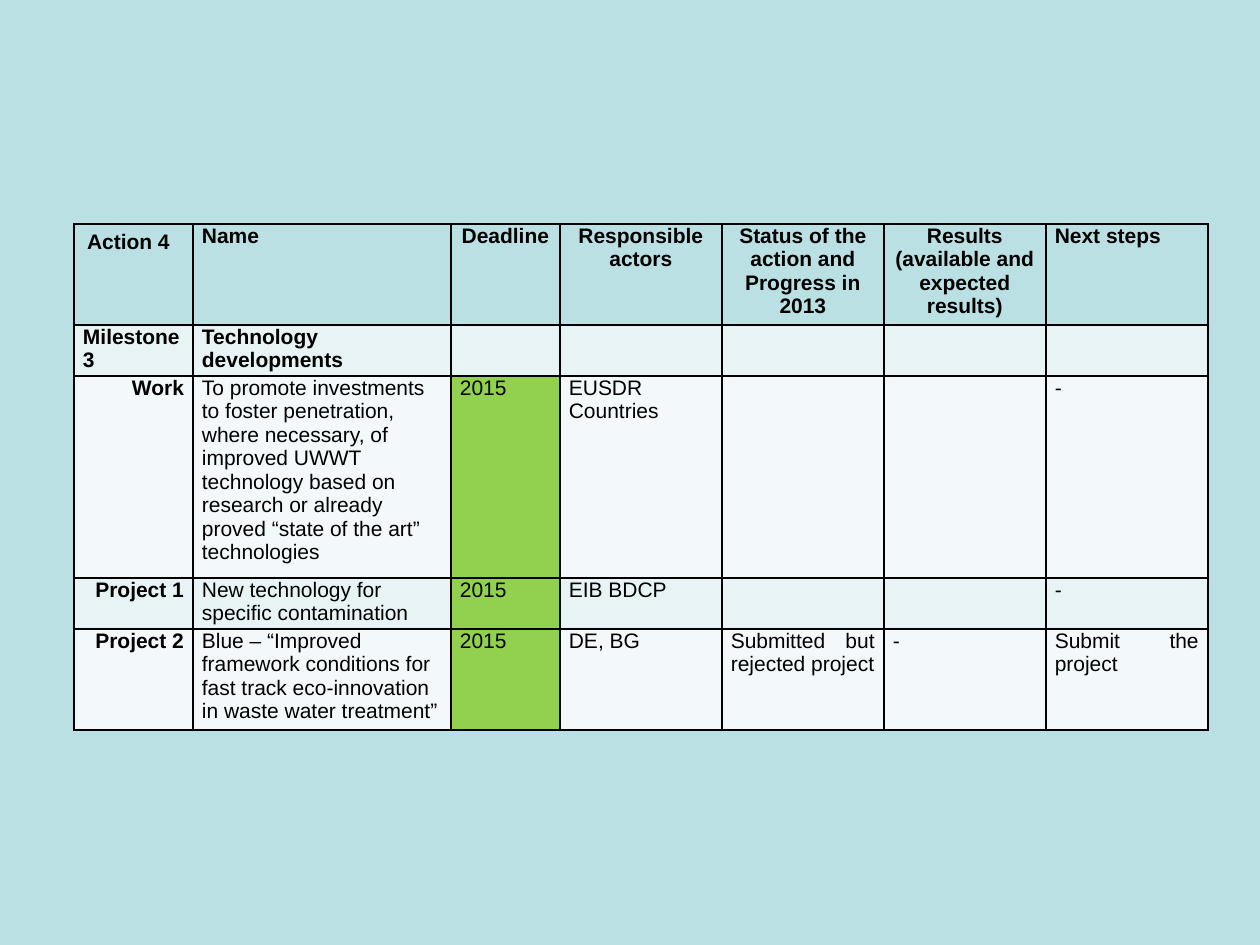
from lxml.etree import SubElement
from pptx import Presentation
from pptx.dml.color import RGBColor
from pptx.enum.text import PP_ALIGN as Align
from pptx.oxml.ns import qn
from pptx.util import Emu, Pt

EMU_PER_PX = 914400 / 126
COLORS = {
    "background": "BBE0E3",
    "header": "BBE0E3",
    "band_dark": "E7F3F4",
    "band_light": "F3F9FA",
    "deadline": "92D050",
    "ink": "000000",
}
COLUMN_WIDTHS = [119, 258, 109, 162, 162, 162, 162]
ROW_HEIGHTS = [101, 51, 202, 51, 101]
HEADER_ALIGNS = [None, Align.JUSTIFY] + [Align.CENTER] * 4 + [Align.JUSTIFY]
ACTIONS = [
    ["Action 4", "Name", "Deadline", "Responsible actors",
     "Status of the action and Progress in 2013",
     "Results (available and expected results)", "Next steps"],
    ["Milestone 3", "Technology developments", "", "", "", "", ""],
    ["Work",
     "To promote investments to foster penetration, where necessary, of improved "
     "UWWT technology based on research or already proved “state of the art” technologies",
     "2015", "EUSDR Countries", "", "", "-"],
    ["Project 1", "New technology for specific contamination",
     "2015", "EIB BDCP", "", "", "-"],
    ["Project 2",
     "Blue – “Improved framework conditions for fast track eco-innovation in waste water treatment”",
     "2015", "DE, BG", "Submitted but rejected project", "-", "Submit the project"],
]


def px(length):
    return Emu(round(length * EMU_PER_PX))


def rgb(name):
    return RGBColor.from_string(COLORS[name])


def border_cell(cell):
    properties = cell._tc.get_or_add_tcPr()
    for side in ("a:lnL", "a:lnR", "a:lnT", "a:lnB"):
        line = SubElement(properties, qn(side), w=str(Pt(1)))
        ink = SubElement(line, qn("a:solidFill"))
        SubElement(ink, qn("a:srgbClr"), val=COLORS["ink"])


def cell_fill(row, column, text):
    if row == 0:
        return "header"
    if column == 2 and text:
        return "deadline"
    return "band_dark" if row % 2 else "band_light"


def cell_align(row, column):
    if row == 0:
        return HEADER_ALIGNS[column]
    if row > 1 and column < 2:
        return Align.RIGHT if column == 0 else None
    return Align.JUSTIFY


def fill_cell(cell, row, column, text):
    is_action_title = row == 0 and column == 0
    border_cell(cell)
    cell.fill.solid()
    cell.fill.fore_color.rgb = rgb(cell_fill(row, column, text))
    cell.margin_left = cell.margin_right = px(13 if is_action_title else 9)
    cell.margin_top = cell.margin_bottom = px(6 if is_action_title else 0)
    paragraph = cell.text_frame.paragraphs[0]
    paragraph.font.size = Pt(12)
    if not text:
        return
    paragraph.alignment = cell_align(row, column)
    if not is_action_title:
        paragraph.space_after = Pt(12)
    run = paragraph.add_run()
    run.text = text
    run.font.name = "Arial"
    run.font.size = Pt(12)
    run.font.bold = row < 2 or column == 0
    run.font.color.rgb = rgb("ink")


def add_action_table(slide, left, top):
    frame = slide.shapes.add_table(
        len(ROW_HEIGHTS), len(COLUMN_WIDTHS), px(left), px(top),
        px(sum(COLUMN_WIDTHS)), px(sum(ROW_HEIGHTS)))
    table = frame.table
    table.first_row = table.horz_banding = False
    for column, width in zip(table.columns, COLUMN_WIDTHS):
        column.width = px(width)
    for row, height in zip(table.rows, ROW_HEIGHTS):
        row.height = px(height)
    for row, texts in enumerate(ACTIONS):
        for column, text in enumerate(texts):
            fill_cell(table.cell(row, column), row, column, text)


def main():
    deck = Presentation()
    deck.slide_width, deck.slide_height = px(1260), px(945)
    slide = deck.slides.add_slide(deck.slide_layouts[6])
    slide.background.fill.solid()
    slide.background.fill.fore_color.rgb = rgb("background")
    add_action_table(slide, 74, 224)
    deck.save("out.pptx")


if __name__ == "__main__":
    main()
